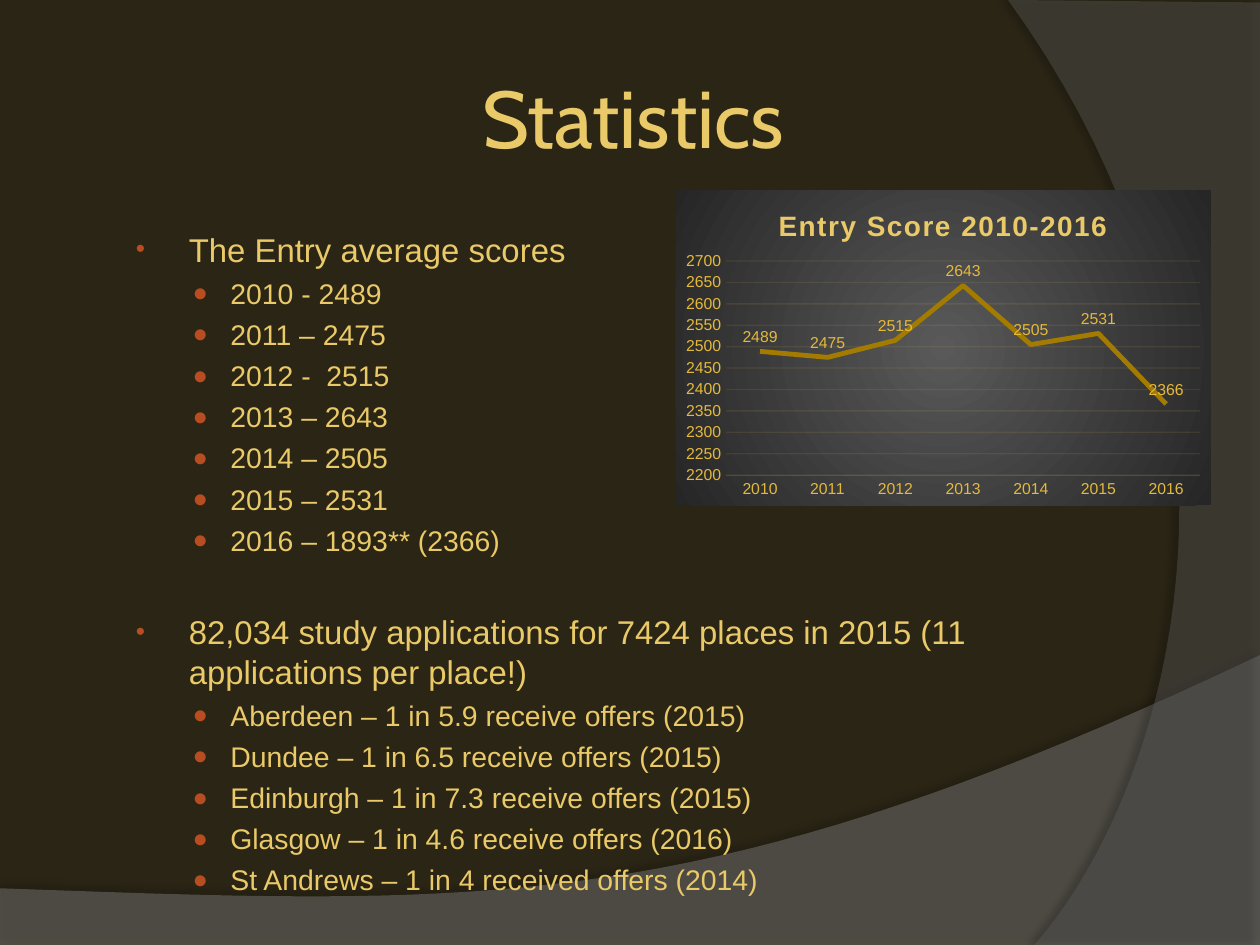
from lxml.etree import SubElement
from pptx import Presentation
from pptx.chart.data import CategoryChartData
from pptx.dml.color import RGBColor
from pptx.enum.chart import XL_CHART_TYPE, XL_LABEL_POSITION, XL_TICK_MARK
from pptx.enum.text import MSO_ANCHOR, PP_ALIGN
from pptx.oxml import parse_xml
from pptx.oxml.ns import nsdecls, qn
from pptx.util import Inches, Pt

GOLD, AMBER, BRONZE, RULE = "EAC968", "E4B93B", "A27B00", "E8C459"
RUST = "B74D21"
# Per level: text size, left margin, hanging indent, bullet, bullet size %
LEVELS = [(18.8, 0.46, 0.42, "•", 80), (16.2, 0.79, 0.30, "●", 90)]
SPACE_BEFORE, SECTION_GAP = 4.1, 31.3

SECTIONS = [
    ("The Entry average scores",
     ["2010 - 2489", "2011 – 2475", "2012 -  2515", "2013 – 2643",
      "2014 – 2505", "2015 – 2531", "2016 – 1893** (2366)"]),
    ("82,034 study applications for 7424 places in 2015 "
     "(11 applications per place!)",
     ["Aberdeen – 1 in 5.9 receive offers (2015)",
      "Dundee – 1 in 6.5 receive offers (2015)",
      "Edinburgh – 1 in 7.3 receive offers (2015)",
      "Glasgow – 1 in 4.6 receive offers (2016)",
      "St Andrews – 1 in 4 received offers (2014)"]),
]
SCORES = {"2010": 2489, "2011": 2475, "2012": 2515, "2013": 2643,
          "2014": 2505, "2015": 2531, "2016": 2366}


def rgb(value):
    return RGBColor.from_string(value)


def set_font(font, size, color, name="Arial", bold=False):
    font.size, font.name, font.bold = Pt(size), name, bold
    font.color.rgb = rgb(color)


def set_alpha(fill, percent):
    """Make a solid fill partly transparent."""
    color = fill._xPr.find(qn("a:solidFill"))[0]
    SubElement(color, qn("a:alpha"), val=str(percent * 1000))


def curve(start, control_1, control_2, end, steps=40):
    """Points along a cubic curve, without its start."""
    points = []
    for step in range(1, steps + 1):
        t = step / steps
        weights = ((1 - t) ** 3, 3 * t * (1 - t) ** 2, 3 * t * t * (1 - t), t ** 3)
        points.append(tuple(
            sum(w * v for w, v in zip(weights, values))
            for values in zip(start, control_1, control_2, end)))
    return points


def add_sweep(page, points, color, alpha, blur, distance, angle, shadow_alpha):
    """Translucent curved panel with a soft shadow along its edge."""
    start, *rest = [(Inches(x), Inches(y)) for x, y in points]
    builder = page.shapes.build_freeform(*start, scale=1.0)
    builder.add_line_segments(rest, close=True)
    sweep = builder.convert_to_shape()
    sweep.fill.solid()
    sweep.fill.fore_color.rgb = rgb(color)
    set_alpha(sweep.fill, alpha)
    sweep.line.fill.background()
    sweep.shadow.inherit = False
    effects = sweep.element.spPr.find(qn("a:effectLst"))
    shadow = SubElement(effects, qn("a:outerShdw"), blurRad=str(Pt(blur)),
                        dist=str(Pt(distance)), dir=str(angle * 60000),
                        algn="ctr", rotWithShape="0")
    shade = SubElement(shadow, qn("a:srgbClr"), val="000000")
    SubElement(shade, qn("a:alpha"), val=str(shadow_alpha * 1000))


def add_background(page):
    page.background.fill.solid()
    page.background.fill.fore_color.rgb = rgb("2A2515")
    bottom = [(0, 7.05), (0, 7.5), (10, 7.5), (10, 5.2)]
    bottom += curve((10, 5.2), (5.59, 7.29), (3.91, 7.19), (0, 7.05))
    add_sweep(page, bottom, "7F7F7F", 45, 4, 3.5, 270, 35)
    right = [(10, 0.02), (10, 7.5), (8.21, 7.5)]
    right += curve((8.21, 7.5), (9.35, 6.19), (10.18, 3), (8, 0))
    add_sweep(page, right, "5E5E5E", 40, 4, 4, 180, 45)


def add_title(page, text):
    title = page.shapes.title
    page.shapes.element.append(title.element)  # in front of the background
    title.left, title.top = Inches(0.94), Inches(0.3)
    title.width, title.height = Inches(8.17), Inches(1.25)
    frame = title.text_frame
    frame.text = text
    frame.vertical_anchor = MSO_ANCHOR.MIDDLE
    frame.margin_left = frame.margin_right = Inches(0.05)
    frame.paragraphs[0].alignment = PP_ALIGN.CENTER
    set_font(frame.paragraphs[0].font, 46, GOLD, "Cabin")


def add_bullet(para, text, level, space_before):
    size, margin, hanging, mark, mark_size = LEVELS[level]
    para.text, para.level = text, level
    para.space_before = Pt(space_before)
    properties = para._p.get_or_add_pPr()
    properties.set("marL", str(Inches(margin)))
    properties.set("indent", str(-Inches(hanging)))
    color = SubElement(properties, qn("a:buClr"))
    SubElement(color, qn("a:srgbClr"), val=RUST)
    SubElement(properties, qn("a:buSzPct"), val=str(mark_size * 1000))
    SubElement(properties, qn("a:buFont"), typeface="Arial")
    SubElement(properties, qn("a:buChar"), char=mark)
    set_font(para.font, size, GOLD)


def add_statistics(page):
    box = page.shapes.add_textbox(Inches(0.94), Inches(1.77),
                                  Inches(8.17), Inches(4.95))
    frame = box.text_frame
    frame.word_wrap = True
    for number, (heading, items) in enumerate(SECTIONS):
        para = frame.add_paragraph() if number else frame.paragraphs[0]
        add_bullet(para, heading, 0, SECTION_GAP if number else 0)
        for item in items:
            add_bullet(frame.add_paragraph(), item, 1, SPACE_BEFORE)


def format_rule(line):
    """Faint gold hairline for gridlines and the category axis."""
    line.width = Pt(0.75)
    line.color.rgb = rgb(RULE)
    set_alpha(line.fill, 10)


def style_chart_area(chart):
    """Radial dark fill, and a fixed place for the plot."""
    area = parse_xml(
        f'<c:spPr {nsdecls("c", "a")}><a:gradFill><a:gsLst>'
        '<a:gs pos="0"><a:srgbClr val="595959"/></a:gs>'
        '<a:gs pos="100000"><a:srgbClr val="262626"/></a:gs></a:gsLst>'
        '<a:path path="circle"><a:fillToRect l="50000" t="50000" r="50000" '
        'b="50000"/></a:path></a:gradFill><a:ln><a:noFill/></a:ln></c:spPr>')
    chart_part = chart.element.find(qn("c:chart"))
    chart_part.addnext(area)
    plot_area = chart_part.find(qn("c:plotArea"))
    for old in plot_area.findall(qn("c:layout")):
        plot_area.remove(old)
    layout = parse_xml(f'<c:layout {nsdecls("c")}><c:manualLayout/></c:layout>')
    settings = [("layoutTarget", "inner"), ("xMode", "edge"), ("yMode", "edge"),
                ("x", "0.095"), ("y", "0.225"), ("w", "0.885"), ("h", "0.68")]
    for name, value in settings:
        SubElement(layout[0], qn(f"c:{name}"), val=value)
    plot_area.insert(0, layout)


def add_score_chart(page):
    data = CategoryChartData()
    data.categories = list(SCORES)
    data.add_series("Series 1", list(SCORES.values()))
    chart = page.shapes.add_chart(XL_CHART_TYPE.LINE, Inches(5.36), Inches(1.51),
                                  Inches(4.25), Inches(2.5), data).chart
    chart.has_legend = False
    set_font(chart.font, 10, GOLD)
    style_chart_area(chart)

    chart.has_title = True
    para = chart.chart_title.text_frame.paragraphs[0]
    span = para.add_run()
    span.text = "Entry Score 2010-2016"
    set_font(span.font, 16, GOLD, bold=True)
    span.font._element.set("spc", "100")

    for axis in (chart.category_axis, chart.value_axis):
        axis.major_tick_mark = axis.minor_tick_mark = XL_TICK_MARK.NONE
        set_font(axis.tick_labels.font, 9, AMBER)
    format_rule(chart.category_axis.format.line)
    scale = chart.value_axis
    scale.minimum_scale, scale.maximum_scale, scale.major_unit = 2200, 2700, 50
    scale.format.line.fill.background()
    format_rule(scale.major_gridlines.format.line)

    plot = chart.plots[0]
    plot.vary_by_categories = False
    series = plot.series[0]
    series.smooth = False
    series.format.line.width = Pt(2.75)
    series.format.line.color.rgb = rgb(BRONZE)
    labels = series.data_labels
    labels.show_value = True
    labels.position = XL_LABEL_POSITION.ABOVE
    set_font(labels.font, 9, AMBER)


def main():
    deck = Presentation()
    deck.slide_width, deck.slide_height = Inches(10), Inches(7.5)
    page = deck.slides.add_slide(deck.slide_layouts[5])
    add_background(page)
    add_title(page, "Statistics")
    add_statistics(page)
    add_score_chart(page)
    deck.save("out.pptx")


if __name__ == "__main__":
    main()
